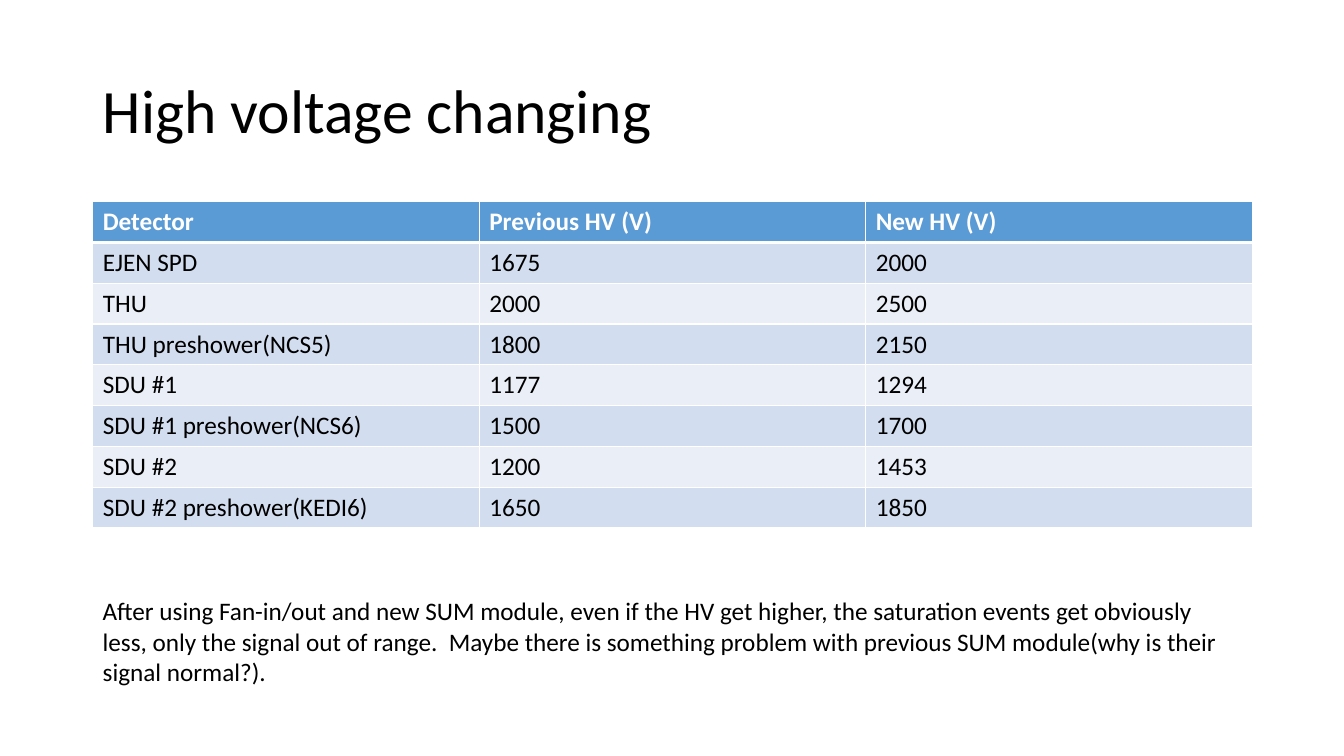
"""Builds a slide listing detector high voltages before and after the change."""
import lxml.etree
import pptx
import pptx.dml.color
import pptx.enum.text
import pptx.oxml.ns
import pptx.util

Inches = pptx.util.Inches
COLORS = {
    "text": "000000",
    "header_text": "FFFFFF",
    "border": "FFFFFF",
    "header": "5B9BD5",
    "odd_row": "D2DEEF",
    "even_row": "EAEFF7",
}
FONT = "Calibri"
LEFT, WIDTH = 0.92, 11.5
VOLTAGES = [
    ("Detector", "Previous HV (V)", "New HV (V)"),
    ("EJEN SPD", "1675", "2000"),
    ("THU", "2000", "2500"),
    ("THU preshower(NCS5)", "1800", "2150"),
    ("SDU #1", "1177", "1294"),
    ("SDU #1 preshower(NCS6)", "1500", "1700"),
    ("SDU #2", "1200", "1453"),
    ("SDU #2 preshower(KEDI6)", "1650", "1850"),
]
REMARK = (
    "After using Fan-in/out and new SUM module, even if the HV get higher, "
    "the saturation events get obviously less, only the signal out of range.  "
    "Maybe there is something problem with previous SUM module"
    "(why is their signal normal?)."
)


def rgb(name):
    return pptx.dml.color.RGBColor.from_string(COLORS[name])


def write(frame, text, size=18, color="text", bold=False):
    frame.text = text
    font = frame.paragraphs[0].runs[0].font
    font.name = FONT
    font.size = pptx.util.Pt(size)
    font.bold = bold
    font.color.rgb = rgb(color)


def add_text(slide, text, top, height, size=18):
    frame = slide.shapes.add_textbox(
        Inches(LEFT), Inches(top), Inches(WIDTH), Inches(height)
    ).text_frame
    frame.word_wrap = True
    write(frame, text, size)
    return frame


def add_border(cell, side, points):
    qn = pptx.oxml.ns.qn
    line = lxml.etree.SubElement(
        cell._tc.get_or_add_tcPr(), qn(f"a:ln{side}"), w=str(pptx.util.Pt(points))
    )
    fill = lxml.etree.SubElement(line, qn("a:solidFill"))
    lxml.etree.SubElement(fill, qn("a:srgbClr"), val=COLORS["border"])


def style_cell(cell, text, row):
    is_header = row == 0
    write(cell.text_frame, text, color="header_text" if is_header else "text", bold=is_header)
    edges = {"L": 1, "R": 1, "T": 3 if row == 1 else 1, "B": 3 if is_header else 1}
    for side, points in edges.items():
        add_border(cell, side, points)
    cell.fill.solid()
    band = "odd_row" if row % 2 else "even_row"
    cell.fill.fore_color.rgb = rgb("header" if is_header else band)


def add_voltage_table(slide, top, height):
    table = slide.shapes.add_table(
        len(VOLTAGES), len(VOLTAGES[0]),
        Inches(LEFT), Inches(top), Inches(WIDTH), Inches(height),
    ).table
    for row, values in enumerate(VOLTAGES):
        for column, value in enumerate(values):
            style_cell(table.cell(row, column), value, row)


def main():
    deck = pptx.Presentation()
    deck.slide_width, deck.slide_height = Inches(13.33), Inches(7.5)
    slide = deck.slides.add_slide(deck.slide_layouts[6])
    title = add_text(slide, "High voltage changing", 0.4, 1.45, size=44)
    title.vertical_anchor = pptx.enum.text.MSO_ANCHOR.MIDDLE
    title.paragraphs[0].line_spacing = 0.9
    add_voltage_table(slide, 2, 3.24)
    add_text(slide, REMARK, 5.86, 1.01)
    deck.save("out.pptx")


if __name__ == "__main__":
    main()
